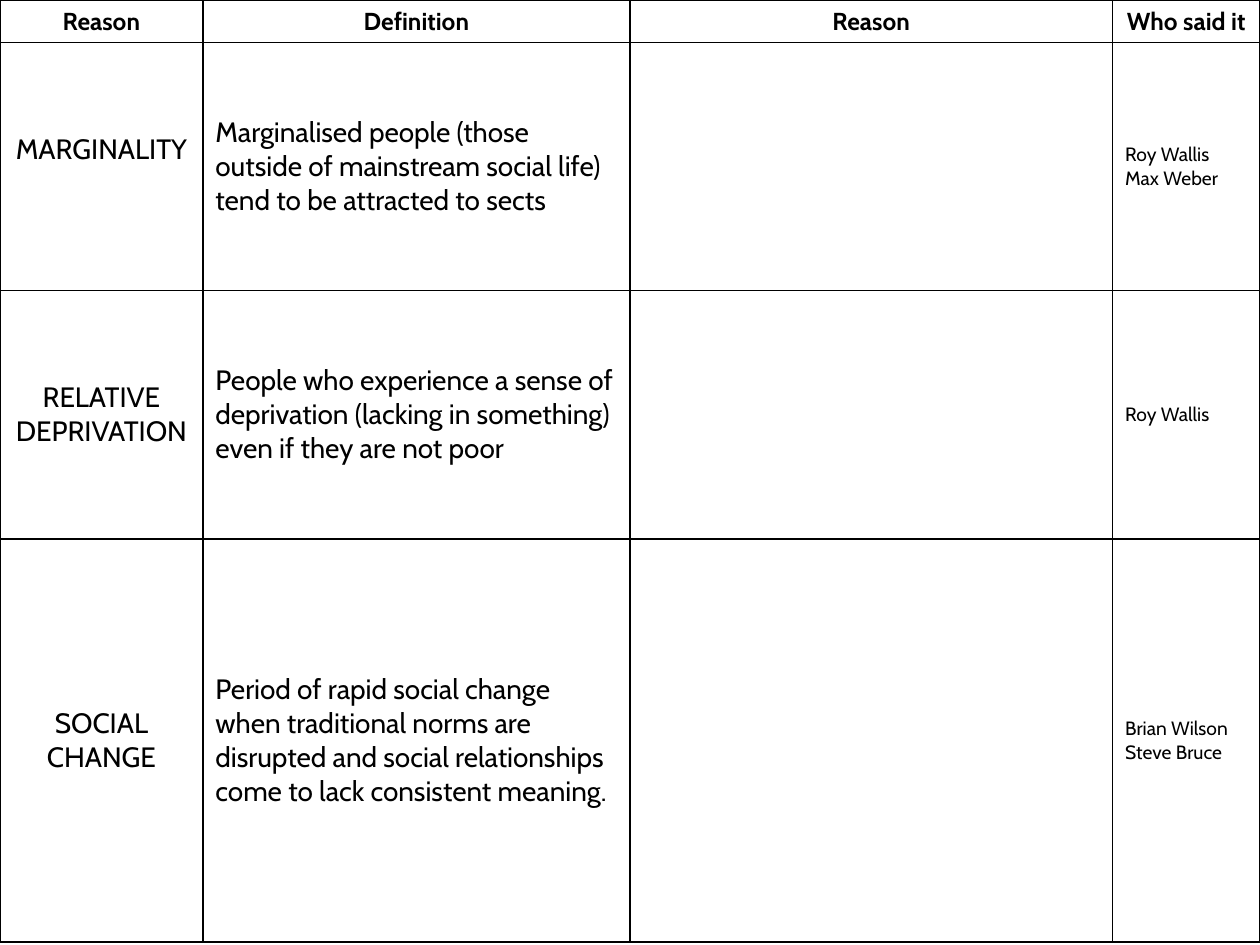
from lxml.etree import SubElement
from pptx import Presentation
from pptx.dml.color import RGBColor
from pptx.enum.text import MSO_ANCHOR as Anchor, PP_ALIGN as Align
from pptx.oxml.ns import qn
from pptx.util import Inches, Pt

FONT = "Cabin"
BLACK = "000000"
COLUMN_WIDTHS = [1.61, 3.39, 3.83, 1.17]
ROW_HEIGHTS = [0.32, 1.97, 1.97, 3.2]
HEADINGS = ["Reason", "Definition", "Reason", "Who said it"]
REASONS = [
    ["MARGINALITY",
     "Marginalised people (those outside of mainstream social life) "
     "tend to be attracted to sects",
     "", "Roy Wallis\nMax Weber"],
    ["RELATIVE DEPRIVATION",
     "People who experience a sense of deprivation (lacking in something) "
     "even if they are not poor",
     "", "Roy Wallis"],
    ["SOCIAL CHANGE",
     "Period of rapid social change when traditional norms are disrupted "
     "and social relationships come to lack consistent meaning.",
     "", "Brian Wilson\nSteve Bruce"],
]
BODY_SIZES = [16, 16, 16, 11]


def color(value):
    return RGBColor.from_string(value)


def set_borders(cell, value, width):
    properties = cell._tc.get_or_add_tcPr()
    for position, side in enumerate(("lnL", "lnR", "lnT", "lnB")):
        line = properties.makeelement(qn(f"a:{side}"), {"w": str(Pt(width))})
        fill = SubElement(line, qn("a:solidFill"))
        SubElement(fill, qn("a:srgbClr"), val=value)
        properties.insert(position, line)


def write_cell(cell, text, size, bold, align, anchor):
    cell.fill.background()
    set_borders(cell, BLACK, 1)
    cell.vertical_anchor = anchor
    cell.text_frame.text = text
    for para in cell.text_frame.paragraphs:
        para.alignment = align
        para.font.size = Pt(size)
        for span in para.runs:
            span.font.name = FONT
            span.font.size = Pt(size)
            span.font.bold = bold
            span.font.color.rgb = color(BLACK)


def add_reasons_table(page, left, top, width, height):
    frame = page.shapes.add_table(
        len(ROW_HEIGHTS), len(COLUMN_WIDTHS),
        Inches(left), Inches(top), Inches(width), Inches(height))
    table = frame.table
    for column, column_width in zip(table.columns, COLUMN_WIDTHS):
        column.width = Inches(column_width * width / sum(COLUMN_WIDTHS))
    for row, row_height in zip(table.rows, ROW_HEIGHTS):
        row.height = Inches(row_height * height / sum(ROW_HEIGHTS))

    for index, heading in enumerate(HEADINGS):
        write_cell(table.cell(0, index), heading, 14, True,
                   Align.CENTER, Anchor.TOP)
    for row_index, texts in enumerate(REASONS, start=1):
        for index, (text, size) in enumerate(zip(texts, BODY_SIZES)):
            align = Align.CENTER if index == 0 else Align.LEFT
            write_cell(table.cell(row_index, index), text, size, False,
                       align, Anchor.MIDDLE)
    # The first reason sits half a line above the middle of its row.
    table.cell(1, 0).margin_bottom = Inches(0.32)


def main():
    deck = Presentation()
    deck.slide_width, deck.slide_height = Inches(10), Inches(7.5)
    page = deck.slides.add_slide(deck.slide_layouts[6])
    add_reasons_table(page, 0, 0, 10, sum(ROW_HEIGHTS))
    deck.save("out.pptx")


if __name__ == "__main__":
    main()
